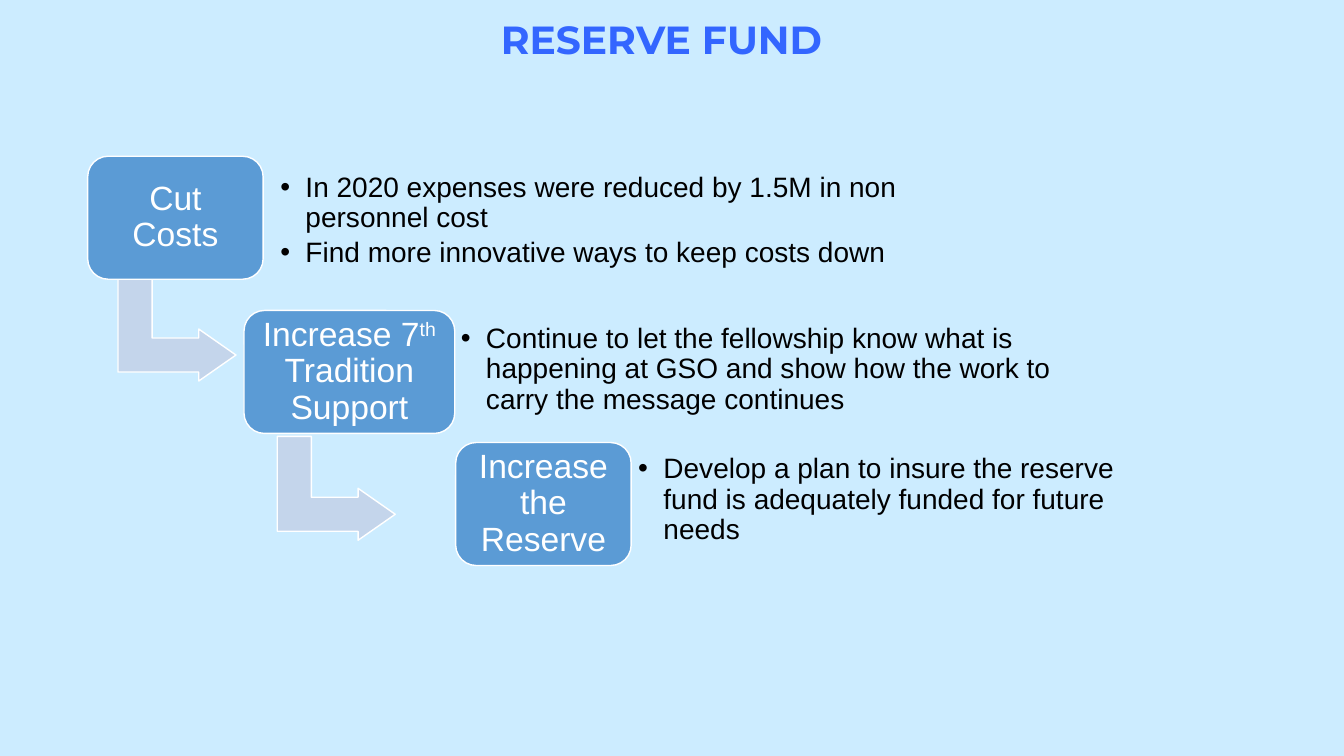
import pptx
import pptx.dml.color
import pptx.enum.shapes
import pptx.enum.text
import pptx.oxml.ns
import pptx.util
from lxml import etree

PX = 9144
COLORS = {
    "background": "CCECFF",
    "title": "3366FF",
    "box": "5B9BD5",
    "arrow": "C4D5EB",
    "outline": "FFFFFF",
    "label": "FFFFFF",
    "body": "000000",
}
STEPS = [
    ((87, 155, 174, 122), [("Cut Costs", False)],
     (270, 158, 664, 122),
     ["In 2020 expenses were reduced by 1.5M in non personnel cost",
      "Find more innovative ways to keep costs down"]),
    ((242, 308, 209, 122),
     [("Increase 7", False), ("th", True), (" Tradition Support", False)],
     (449, 318, 622, 98),
     ["Continue to let the fellowship know what is happening at GSO "
      "and show how the work to carry the message continues"]),
    ((452, 439, 174, 122), [("Increase the Reserve", False)],
     (625, 447, 511, 98),
     ["Develop a plan to insure the reserve fund is adequately funded "
      "for future needs"]),
]
ARROWS = [(124, 268, 103, 117), (282, 426, 103, 117)]


def rgb(name):
    """Return the named palette colour."""
    return pptx.dml.color.RGBColor.from_string(COLORS[name])


def emu(box):
    """Convert a sequence of px lengths to EMU."""
    return [n * PX for n in box]


def place(sp, box):
    """Move and size a shape to a px box."""
    sp.left, sp.top, sp.width, sp.height = emu(box)


def set_frame(tf, inset):
    """Wrap and centre the frame vertically with equal insets."""
    tf.word_wrap = True
    tf.auto_size = pptx.enum.text.MSO_AUTO_SIZE.NONE
    tf.vertical_anchor = pptx.enum.text.MSO_ANCHOR.MIDDLE
    tf.margin_left = tf.margin_right = inset * PX
    tf.margin_top = tf.margin_bottom = inset * PX


def set_paragraph(p, align, after):
    """Set alignment and spacing of a paragraph."""
    p.alignment = align
    p.line_spacing = 0.9
    p.space_before = pptx.util.Pt(0)
    p.space_after = pptx.util.Pt(after)


def set_font(r, size, color, name="Arial", bold=False):
    """Format the font of a run."""
    r.font.size = pptx.util.Pt(size)
    r.font.name = name
    r.font.bold = bold
    r.font.color.rgb = rgb(color)


def add_bullet(p):
    """Give a paragraph a round bullet with a hanging indent."""
    pPr = p._p.get_or_add_pPr()
    pPr.set("marL", str(25 * PX))
    pPr.set("indent", str(-25 * PX))
    bu = etree.SubElement(pPr, pptx.oxml.ns.qn("a:buChar"))
    bu.set("char", "•")


def fill_title(sp, text):
    """Write the slide title."""
    place(sp, (-5, 0, 1333, 83))
    tf = sp.text_frame
    tf.text = text
    set_frame(tf, 5)
    p = tf.paragraphs[0]
    set_paragraph(p, pptx.enum.text.PP_ALIGN.CENTER, 0)
    set_font(p.runs[0], 28, "title", "Montserrat", True)


def fill_list(sp, box, items):
    """Write a bulleted list into a body placeholder."""
    place(sp, box)
    tf = sp.text_frame
    tf.text = "\n".join(items)
    set_frame(tf, 8)
    for p in tf.paragraphs:
        p.level = 1
        set_paragraph(p, pptx.enum.text.PP_ALIGN.LEFT, 3)
        add_bullet(p)
        set_font(p.runs[0], 20, "body")


def add_block(s, kind, box, color):
    """Add a filled preset shape with a thin outline."""
    sp = s.shapes.add_shape(kind, *emu(box))
    sp.shadow.inherit = False
    sp.fill.solid()
    sp.fill.fore_color.rgb = rgb(color)
    sp.line.color.rgb = rgb("outline")
    sp.line.width = pptx.util.Pt(1)
    return sp


def add_arrow(s, box):
    """Add a bent arrow that leads down and right to the next step."""
    sp = add_block(s, pptx.enum.shapes.MSO_SHAPE.BENT_UP_ARROW, box, "arrow")
    sp.rotation = 90
    for i, value in enumerate((0.328, 0.25, 0.358)):
        sp.adjustments[i] = value


def add_step(s, box, parts):
    """Add a rounded step box with its label."""
    sp = add_block(s, pptx.enum.shapes.MSO_SHAPE.ROUNDED_RECTANGLE, box, "box")
    set_frame(sp.text_frame, 10)
    p = sp.text_frame.paragraphs[0]
    set_paragraph(p, pptx.enum.text.PP_ALIGN.CENTER, 8.4)
    for text, raised in parts:
        r = p.add_run()
        r.text = text
        set_font(r, 24, "label")
        if raised:
            r.font._element.set("baseline", "30000")


def main():
    """Build and save the slide."""
    prs = pptx.Presentation()
    prs.slide_width, prs.slide_height = emu((1333, 750))
    s = prs.slides.add_slide(prs.slide_layouts.get_by_name("Comparison"))
    s.background.fill.solid()
    s.background.fill.fore_color.rgb = rgb("background")
    fill_title(s.shapes.title, "RESERVE FUND ")
    bodies = list(s.placeholders)[1:]
    for box in ARROWS:
        add_arrow(s, box)
    for body, (box, parts, list_box, items) in zip(bodies, STEPS):
        add_step(s, box, parts)
        fill_list(body, list_box, items)
    for body in bodies[len(STEPS):]:
        body._element.getparent().remove(body._element)
    prs.save("out.pptx")


if __name__ == "__main__":
    main()
